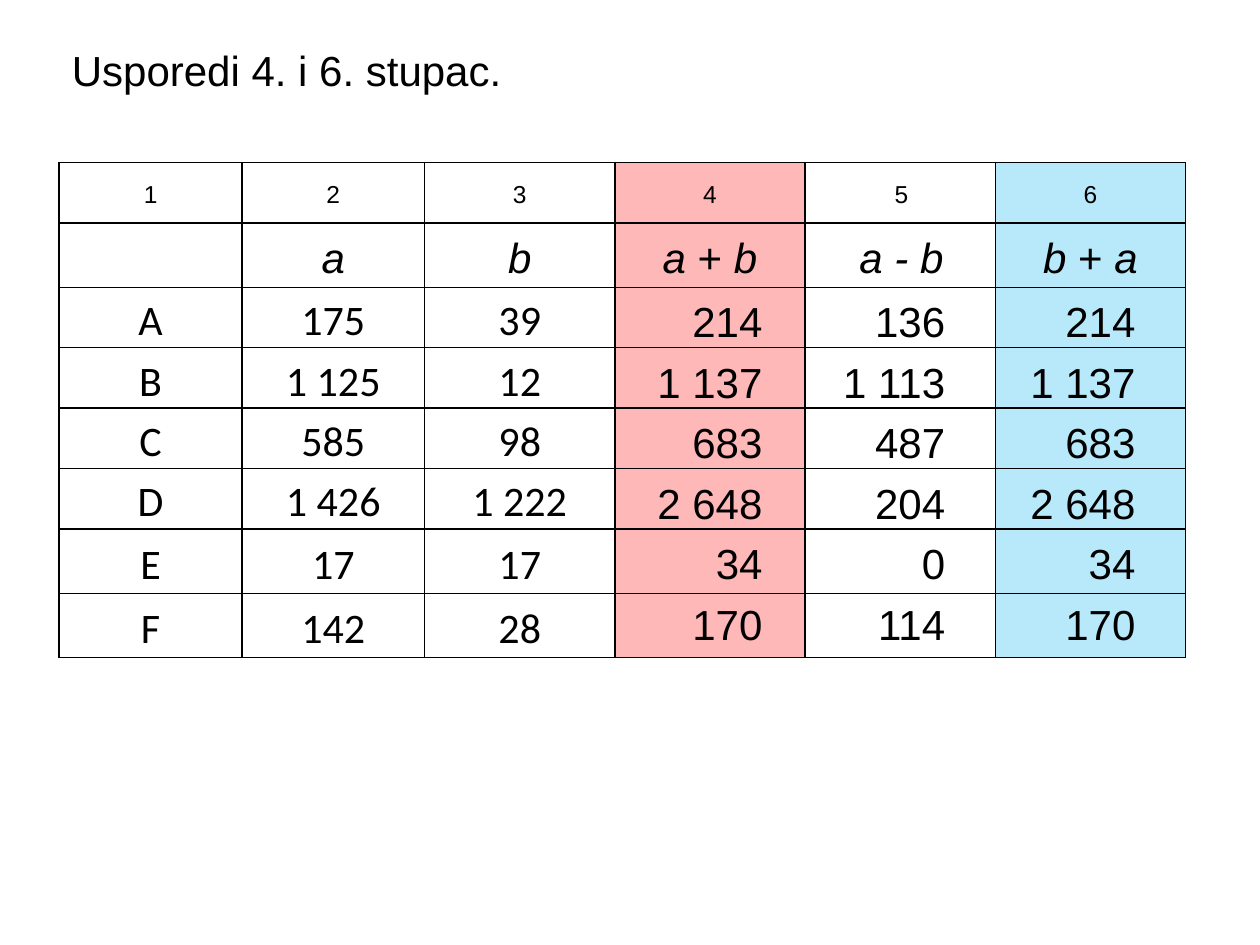
from lxml import etree
from pptx import Presentation
from pptx import util as u
from pptx.dml.color import RGBColor
from pptx.enum import text
from pptx.oxml.ns import qn

BLACK = RGBColor(0, 0, 0)
RED = RGBColor(0xFF, 0, 0)
BLUE = RGBColor(0, 0xB0, 0xF0)

LEFT, TOP = 0.47, 1.29
COLS = [1.45] * 2 + [1.51] * 4
ROWS = [0.48, 0.51] + [0.48] * 4 + [0.51] * 2
ROW_STEP = 0.48

FORMULAS = [[], ["a"], ["b"], ["a", " + ", "b"], ["a - b"], ["b", " + ", "a"]]
GIVEN = [
    ("A", "175", "39"),
    ("B", "1 125", "12"),
    ("C", "585", "98"),
    ("D", "1 426", "1 222"),
    ("E", "17", "17"),
    ("F", "142", "28"),
]
SUMS = ["214", "1 137", "683", "2 648", "34", "170"]
DIFFERENCES = ["136", "1 113", "487", "204", "0", "114"]


def add_run(p, words, size=24, font="Arial", italic=False):
    r = p.add_run()
    r.text = words
    r.font.size, r.font.name, r.font.italic = u.Pt(size), font, italic
    r.font.color.rgb = BLACK


def style_cell(cell, tint):
    """Black borders on all sides and an optional pale tint."""
    tc_pr = cell._tc.get_or_add_tcPr()
    for side in ("a:lnL", "a:lnR", "a:lnT", "a:lnB"):
        ln = etree.SubElement(tc_pr, qn(side), w=str(u.Pt(1)))
        solid = etree.SubElement(ln, qn("a:solidFill"))
        etree.SubElement(solid, qn("a:srgbClr"), val=str(BLACK))
    if tint is None:
        cell.fill.background()
    else:
        cell.fill.solid()
        cell.fill.fore_color.rgb = tint
        color = tc_pr.find(qn("a:solidFill")).find(qn("a:srgbClr"))
        etree.SubElement(color, qn("a:alpha"), val="28000")
    cell.vertical_anchor = text.MSO_ANCHOR.MIDDLE
    cell.margin_left = cell.margin_right = u.Inches(0.07)
    cell.margin_top = cell.margin_bottom = 0


prs = Presentation()
prs.slide_width, prs.slide_height = u.Inches(10), u.Inches(7.5)
s = prs.slides.add_slide(prs.slide_layouts[5])

# Title
sp = s.shapes.title
sp.left, sp.top, sp.width, sp.height = map(u.Inches, (LEFT, 0.3, 5.42, 0.5))
tf = sp.text_frame
tf.vertical_anchor = text.MSO_ANCHOR.TOP
tf.auto_size = text.MSO_AUTO_SIZE.NONE
p = tf.paragraphs[0]
p.alignment = text.PP_ALIGN.LEFT
add_run(p, "Usporedi 4. i 6. stupac.")

# Table: column numbers, formulas, then the given values
table = s.shapes.add_table(
    len(ROWS), len(COLS), u.Inches(LEFT), u.Inches(TOP),
    u.Inches(sum(COLS)), u.Inches(sum(ROWS))).table
table.first_row = table.horz_banding = False
for column, width in zip(table.columns, COLS):
    column.width = u.Inches(width)
for row, height in zip(table.rows, ROWS):
    row.height = u.Inches(height)

tints = {3: RED, 5: BLUE}
for i in range(len(ROWS)):
    for j in range(len(COLS)):
        cell = table.cell(i, j)
        style_cell(cell, tints.get(j))
        p = cell.text_frame.paragraphs[0]
        p.alignment = text.PP_ALIGN.CENTER
        p.line_spacing = 1.15
        if i < 2 and j == 4:
            p_pr = p._p.get_or_add_pPr()
            p_pr.set("marL", str(u.Inches(0.25)))
            p_pr.set("indent", str(u.Inches(-0.23)))
        if i == 0:
            add_run(p, str(j + 1), size=14)
        elif i == 1:
            for part in FORMULAS[j]:
                add_run(p, part, italic=part != " + ")
        elif j < 3:
            add_run(p, GIVEN[i - 2][j], font="Calibri")

# Results laid over the empty columns
for left, width, results in ((5.05, 1.1, SUMS), (6.46, 1.14, DIFFERENCES),
                             (8.01, 1.1, SUMS)):
    for i, result in enumerate(results):
        sp = s.shapes.add_textbox(
            u.Inches(left), u.Inches(2.3 + i * ROW_STEP),
            u.Inches(width), u.Inches(0.5))
        tf = sp.text_frame
        tf.word_wrap = True
        tf.auto_size = text.MSO_AUTO_SIZE.SHAPE_TO_FIT_TEXT
        p = tf.paragraphs[0]
        p.alignment = text.PP_ALIGN.RIGHT
        add_run(p, result)

prs.save("out.pptx")
